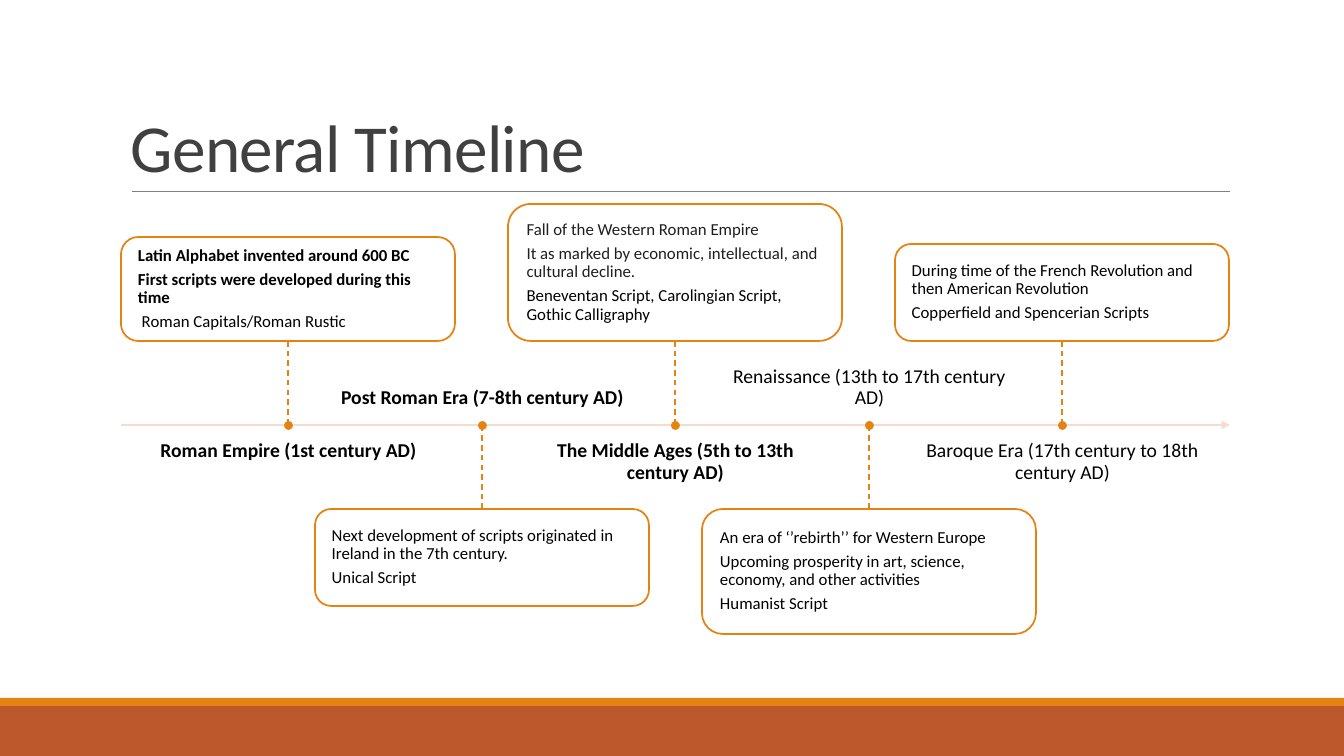
import pptx
import pptx.dml.color
import pptx.enum.dml
import pptx.enum.shapes
import pptx.enum.text
import pptx.oxml.ns
import pptx.util
import lxml.etree

EMU_PER_PX = 914400 / 100.8
ORANGE, RUST, BLACK, CHARCOAL = "E48312", "BD582C", "000000", "1F1F1F"
SHAPES = pptx.enum.shapes.MSO_SHAPE
ANCHOR = pptx.enum.text.MSO_ANCHOR
qn = pptx.oxml.ns.qn


def px(*lengths):
    return [pptx.util.Emu(round(length * EMU_PER_PX)) for length in lengths]


def rgb(value):
    return pptx.dml.color.RGBColor.from_string(value)


presentation = pptx.Presentation()
presentation.slide_width, presentation.slide_height = px(1344, 756)
slide = presentation.slides.add_slide(presentation.slide_layouts[6])
shapes = slide.shapes

# Footer bands
for top, height, color in [(706, 50, RUST), (698, 8, ORANGE)]:
    band = shapes.add_shape(SHAPES.RECTANGLE, *px(0, top, 1344, height))
    band.shadow.inherit = False
    band.fill.solid()
    band.fill.fore_color.rgb = rgb(color)
    band.line.fill.background()

# Title
title = shapes.add_textbox(*px(121, 31, 1109, 160))
title.text_frame.word_wrap = True
title.text_frame.vertical_anchor = ANCHOR.BOTTOM
title.text_frame.text = "General Timeline"
paragraph = title.text_frame.paragraphs[0]
paragraph.line_spacing = 0.85
font = paragraph.runs[0].font
font.name, font.size, font.color.rgb = "Calibri", pptx.util.Pt(48), rgb("404040")
paragraph.runs[0]._r.get_or_add_rPr().set("spc", "-50")

# Title rule and time axis
AXIS_Y = 425
STRAIGHT = pptx.enum.shapes.MSO_CONNECTOR.STRAIGHT
rule = shapes.add_connector(STRAIGHT, *px(132, 191, 1230, 191))
axis = shapes.add_connector(STRAIGHT, *px(121, AXIS_Y, 1230, AXIS_Y))
for line, color, width in [(rule, "808080", 0.5), (axis, "F5D9CC", 1.25)]:
    line.line.color.rgb = rgb(color)
    line.line.width = pptx.util.Pt(width)
    lxml.etree.SubElement(line._element.spPr, qn("a:effectLst"))
axis_line = axis.line._get_or_add_ln()
lxml.etree.SubElement(axis_line.find(".//" + qn("a:srgbClr")), qn("a:alpha"), val="90000")
lxml.etree.SubElement(axis_line, qn("a:tailEnd"), type="triangle")

# Eras: label, bold label, box height, box paragraphs (text, bold, colour)
eras = [
    ("Roman Empire (1st century AD)", True, 104, [
        ("Latin Alphabet invented around 600 BC", True, BLACK),
        ("First scripts were developed during this time", True, BLACK),
        (" Roman Capitals/Roman Rustic", False, BLACK)]),
    ("Post Roman Era (7-8th century AD)", True, 97, [
        ("Next development of scripts originated in Ireland in the 7th century.", False, BLACK),
        ("Unical Script", False, BLACK)]),
    ("The Middle Ages (5th to 13th century AD)", True, 137, [
        ("Fall of the Western Roman Empire", False, CHARCOAL),
        ("It as marked by economic, intellectual, and cultural decline.", False, CHARCOAL),
        ("Beneventan Script, Carolingian Script, Gothic Calligraphy", False, BLACK)]),
    ("Renaissance (13th to 17th century AD)", False, 125, [
        ("An era of ‘’rebirth’’ for Western Europe", False, BLACK),
        ("Upcoming prosperity in art, science, economy, and other activities", False, BLACK),
        ("Humanist Script", False, BLACK)]),
    ("Baroque Era (17th century to 18th century AD)", False, 97, [
        ("During time of the French Revolution and then American Revolution", False, BLACK),
        ("Copperfield and Spencerian Scripts", False, BLACK)]),
]

for index, (label_text, label_bold, box_height, notes) in enumerate(eras):
    center = (577 + 387 * index) // 2
    box_above = index % 2 == 0

    # Label on the side of the axis away from the box
    label = shapes.add_textbox(*px(center - 146, 441 if box_above else 359, 293, 50))
    frame = label.text_frame
    frame.word_wrap = True
    frame.margin_left = frame.margin_top = frame.margin_right = frame.margin_bottom = 0
    frame.vertical_anchor = ANCHOR.TOP if box_above else ANCHOR.BOTTOM
    frame.text = label_text
    paragraph = frame.paragraphs[0]
    paragraph.alignment = pptx.enum.text.PP_ALIGN.CENTER
    paragraph.line_spacing = 0.9
    font = paragraph.runs[0].font
    font.name, font.size, font.bold = "Calibri", pptx.util.Pt(14), label_bold
    font.color.rgb = rgb(BLACK)

    # Box with its notes
    box_top = 341 - box_height if box_above else 509
    box = shapes.add_shape(SHAPES.ROUNDED_RECTANGLE, *px(center - 167, box_top, 334, box_height))
    box.shadow.inherit = False
    box.fill.solid()
    box.fill.fore_color.rgb = rgb("FFFFFF")
    fill_color = box._element.spPr.find(qn("a:solidFill")).find(qn("a:srgbClr"))
    lxml.etree.SubElement(fill_color, qn("a:alpha"), val="90000")
    box.line.color.rgb = rgb(ORANGE)
    box.line.width = pptx.util.Pt(1.25)
    frame = box.text_frame
    frame.word_wrap = True
    frame.vertical_anchor = ANCHOR.MIDDLE
    frame.margin_left, frame.margin_top, frame.margin_right, frame.margin_bottom = px(12, 12, 12, 12)
    frame.text = "\n".join(text for text, bold, color in notes)
    for paragraph, (text, bold, color) in zip(frame.paragraphs, notes):
        paragraph.alignment = pptx.enum.text.PP_ALIGN.LEFT
        paragraph.line_spacing = 0.9
        font = paragraph.runs[0].font
        font.name, font.size, font.bold = "Calibri", pptx.util.Pt(12), bold
        font.color.rgb = rgb(color)
    for paragraph in frame.paragraphs[:-1]:
        paragraph.space_after = pptx.util.Pt(4.2)

    # Dashed stem from box to axis
    stem = shapes.add_connector(STRAIGHT, *px(center, 341 if box_above else 509, center, AXIS_Y))
    stem.begin_connect(box, 2 if box_above else 0)
    stem.line.color.rgb = rgb(ORANGE)
    stem.line.width = pptx.util.Pt(1)
    stem.line.dash_style = pptx.enum.dml.MSO_LINE.DASH
    lxml.etree.SubElement(stem._element.spPr, qn("a:effectLst"))

    # Dot on the axis
    dot = shapes.add_shape(SHAPES.OVAL, *px(center - 3, AXIS_Y - 3, 7, 7))
    dot.shadow.inherit = False
    dot.fill.solid()
    dot.fill.fore_color.rgb = rgb(ORANGE)
    dot.line.color.rgb = rgb(ORANGE)
    dot.line.width = pptx.util.Pt(1.25)

presentation.save("out.pptx")
